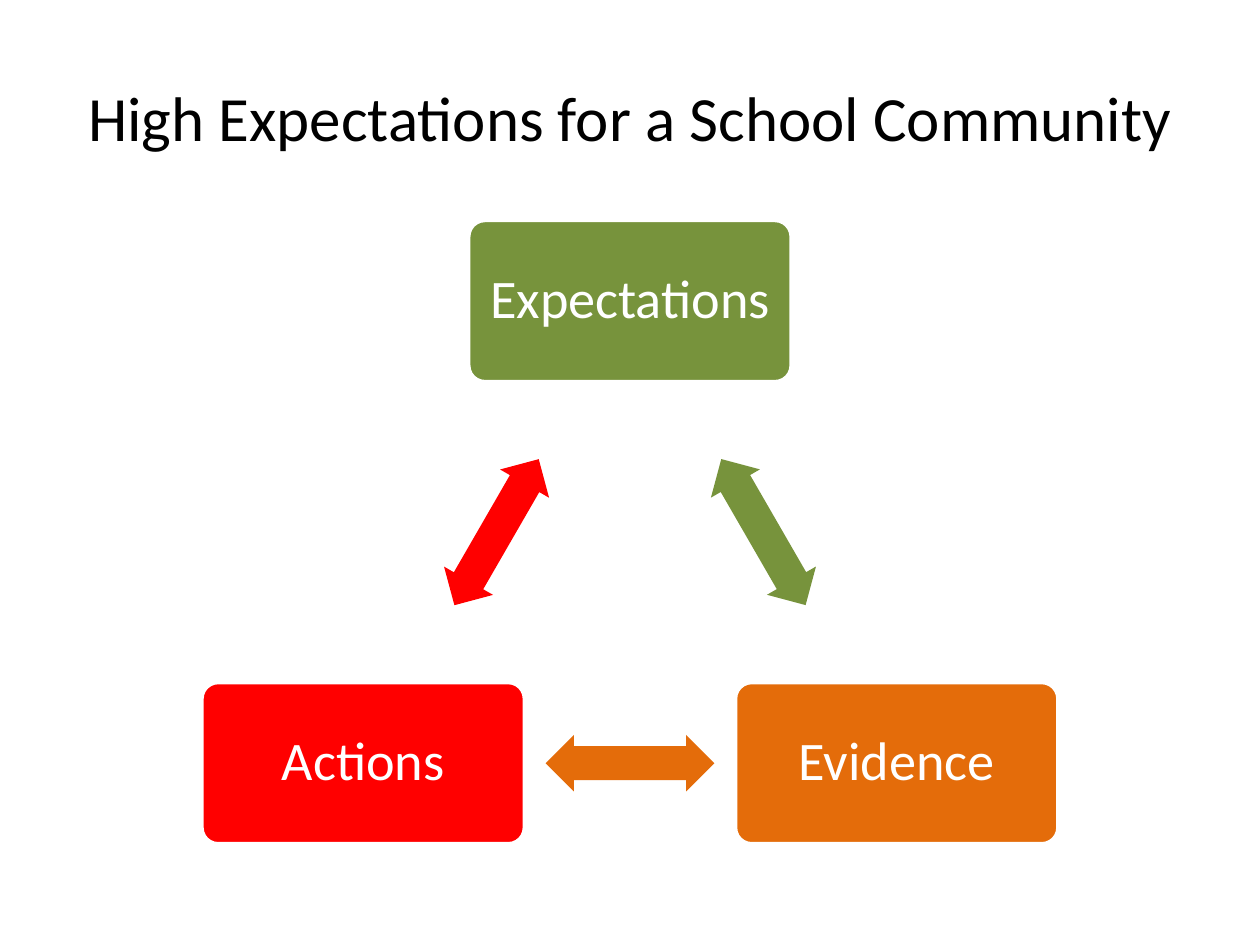
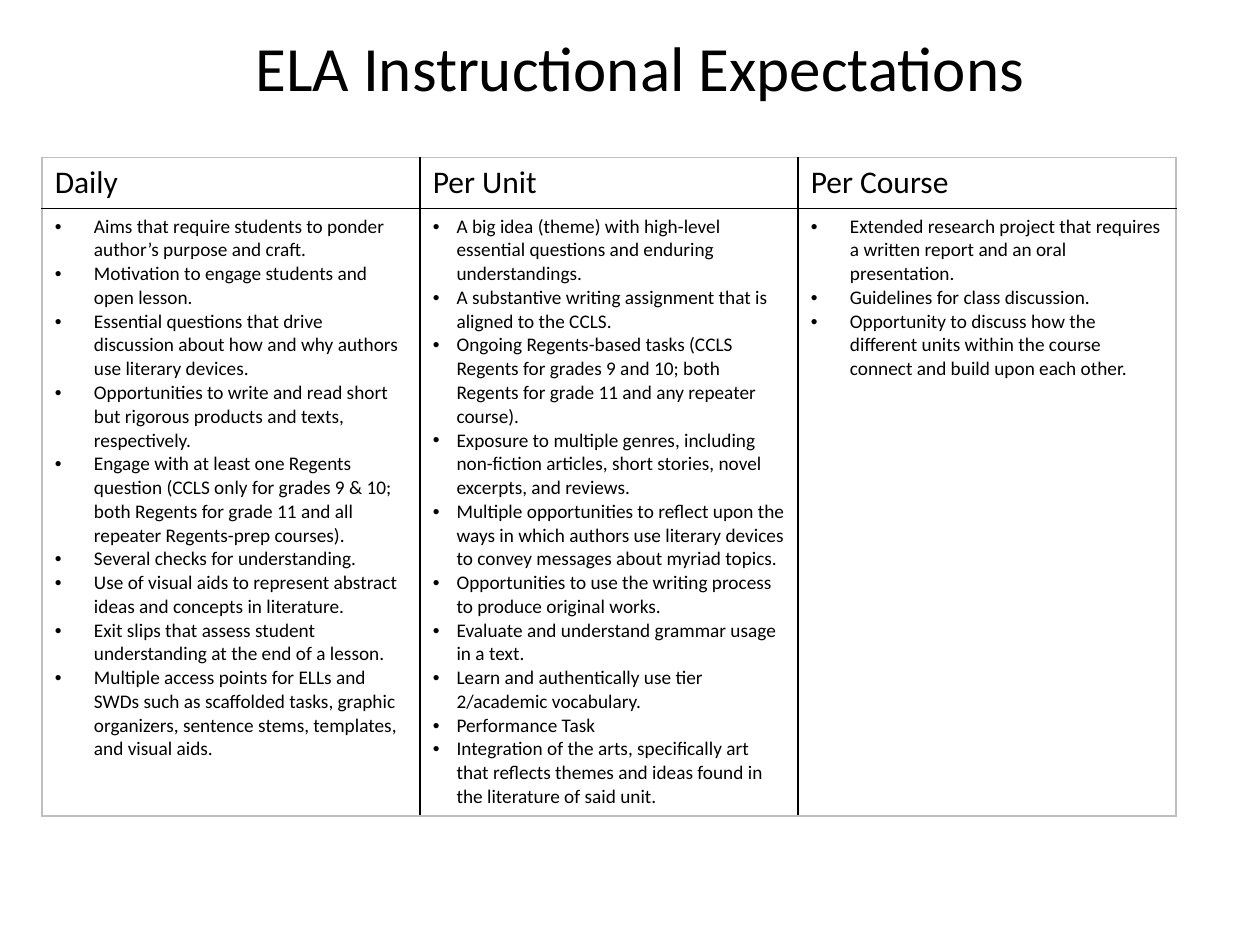
from dataclasses import dataclass
from math import cos, radians, sin

from lxml import etree
from pptx import Presentation
from pptx.dml.color import RGBColor
from pptx.enum.shapes import MSO_SHAPE
from pptx.enum.text import MSO_ANCHOR, PP_ALIGN
from pptx.oxml.ns import qn
from pptx.shapes.autoshape import Shape
from pptx.slide import Slide
from pptx.table import _Cell as Cell
from pptx.text.text import TextFrame
from pptx.util import Cm, Pt

ROUND = MSO_SHAPE.ROUNDED_RECTANGLE
ARROW = MSO_SHAPE.LEFT_RIGHT_ARROW
MIDDLE = MSO_ANCHOR.MIDDLE
CENTER = PP_ALIGN.CENTER
LEFT = PP_ALIGN.LEFT

FONT = "Calibri"
BLACK, WHITE, GRAY = "000000", "FFFFFF", "BFBFBF"
GREEN, ORANGE, RED = "77933C", "E46C0A", "FF0000"


@dataclass(frozen=True)
class Node:
    label: str
    color: str
    angle: int  # degrees, clockwise from the right
    turn: int  # rotation of the arrow to the next node


@dataclass(frozen=True)
class Column:
    head: str
    indent: float  # cm
    items: tuple[str, ...]


NODES = (
    Node("Expectations", GREEN, -90, 60),
    Node("Evidence", ORANGE, 30, 180),
    Node("Actions", RED, 150, 300),
)

COLUMNS = (
    Column("Daily", 0.79, (
        "Aims that require students to ponder author’s purpose and craft.",
        "Motivation to engage students and open lesson.",
        "Essential questions that drive discussion about how and why authors "
        "use literary devices.",
        "Opportunities to write and read short but rigorous products and "
        "texts, respectively.",
        "Engage with at least one Regents question (CCLS only for grades "
        "9 & 10; both Regents for grade 11 and all repeater Regents-prep "
        "courses).",
        "Several checks for understanding.",
        "Use of visual aids to represent abstract ideas and concepts in "
        "literature.",
        "Exit slips that assess student understanding at the end of a lesson.",
        "Multiple access points for ELLs and SWDs such as scaffolded tasks, "
        "graphic organizers, sentence stems, templates, and visual aids.",
    )),
    Column("Per Unit", 0.48, (
        "A big idea (theme) with high-level essential questions and enduring "
        "understandings.",
        "A substantive writing assignment that is aligned to the CCLS.",
        "Ongoing Regents-based tasks (CCLS Regents for grades 9 and 10; both "
        "Regents for grade 11 and any repeater course).",
        "Exposure to multiple genres, including non-fiction articles, short "
        "stories, novel excerpts, and reviews.",
        "Multiple opportunities to reflect upon the ways in which authors use "
        "literary devices to convey messages about myriad topics.",
        "Opportunities to use the writing process to produce original works.",
        "Evaluate and understand grammar usage in a text.",
        "Learn and authentically use tier 2/academic vocabulary.",
        "Performance Task",
        "Integration of the arts, specifically art that reflects themes and "
        "ideas found in the literature of said unit.",
    )),
    Column("Per Course", 0.79, (
        "Extended research project that requires a written report and an "
        "oral presentation.",
        "Guidelines for class discussion.",
        "Opportunity to discuss how the different units within the course "
        "connect and build upon each other.",
    )),
)


def rgb(code: str) -> RGBColor:
    return RGBColor.from_string(code)


def write(frame: TextFrame, text: str, size: float, color: str = BLACK,
          align: PP_ALIGN = LEFT) -> None:
    frame.word_wrap = True
    frame.text = text
    for para in frame.paragraphs:
        para.alignment = align
        for run in para.runs:
            run.font.name = FONT
            run.font.size = Pt(size)
            run.font.color.rgb = rgb(color)


def add_title(slide: Slide, text: str, left: float, top: float,
              height: float, foot: float = 0.13) -> None:
    box = slide.shapes.add_textbox(Cm(left), Cm(top), Cm(22.86), Cm(height))
    frame = box.text_frame
    write(frame, text, 36, align=CENTER)
    frame.vertical_anchor = MIDDLE
    frame.margin_bottom = Cm(foot)


def add_block(slide: Slide, kind: MSO_SHAPE, mid: tuple[float, float],
              size: tuple[float, float], color: str) -> Shape:
    """Draw a plain filled shape around its middle point."""
    (x, y), (wide, high) = mid, size
    shape = slide.shapes.add_shape(
        kind, Cm(x - wide / 2), Cm(y - high / 2), Cm(wide), Cm(high))
    shape.shadow.inherit = False
    shape.fill.solid()
    shape.fill.fore_color.rgb = rgb(color)
    shape.line.fill.background()
    return shape


def add_node(slide: Slide, node: Node) -> None:
    box = add_block(slide, ROUND, on_ring(node.angle, 6.21), (6.5, 3.25),
                    node.color)
    box.adjustments[0] = 0.1
    box.line.color.rgb = rgb(WHITE)
    box.line.width = Pt(2)
    frame = box.text_frame
    write(frame, node.label, 31, WHITE, CENTER)
    frame.paragraphs[0].line_spacing = 0.9
    frame.vertical_anchor = MIDDLE
    frame.margin_left = frame.margin_right = Cm(0.33)

    # The arrow sits halfway along the side to the next node
    arrow = add_block(slide, ARROW, on_ring(node.angle + 60, 6.21 / 2),
                      (3.4, 1.14), node.color)
    arrow.adjustments[0] = 0.6
    arrow.adjustments[1] = 0.5
    arrow.rotation = node.turn


def on_ring(angle: float, radius: float) -> tuple[float, float]:
    turn = radians(angle)
    return 12.7 + radius * cos(turn), 12.28 + radius * sin(turn)


def add_bullets(frame: TextFrame, indent: float) -> None:
    for para in frame.paragraphs:
        props = para._p.get_or_add_pPr()
        props.set("marL", str(Cm(indent)))
        props.set("indent", str(-Cm(indent)))
        etree.SubElement(props, qn("a:buFont"), typeface="Arial")
        etree.SubElement(props, qn("a:buChar"), char="•")


def style_cell(cell: Cell, edges: dict[str, str]) -> None:
    """Fill the cell white and draw its edges, given in L, R, T, B order."""
    cell.fill.solid()
    cell.fill.fore_color.rgb = rgb(WHITE)
    props = cell._tc.get_or_add_tcPr()
    for spot, (side, color) in enumerate(edges.items()):
        line = etree.Element(qn(f"a:ln{side}"), w=str(Pt(1)))
        fill = etree.SubElement(line, qn("a:solidFill"))
        etree.SubElement(fill, qn("a:srgbClr"), val=color)
        props.insert(spot, line)


def add_grid(slide: Slide, columns: tuple[Column, ...]) -> None:
    # The second row is tall enough for the longest list
    heights = (1.03, 12.25)
    last = len(columns) - 1
    table = slide.shapes.add_table(
        len(heights), len(columns), Cm(0.85), Cm(3.17),
        Cm(22.86), Cm(sum(heights))).table
    table.first_row = table.horz_banding = False
    for row, height in zip(table.rows, heights):
        row.height = Cm(height)
    for col, column in enumerate(columns):
        table.columns[col].width = Cm(7.62)
        head, body = table.cell(0, col), table.cell(1, col)
        write(head.text_frame, column.head, 18)
        write(body.text_frame, "\n".join(column.items), 11)
        add_bullets(body.text_frame, column.indent)
        # Gray outside, black between cells
        sides = {"L": BLACK if col else GRAY,
                 "R": BLACK if col < last else GRAY}
        style_cell(head, {**sides, "T": GRAY, "B": BLACK})
        style_cell(body, {**sides, "T": BLACK, "B": GRAY})


def main() -> None:
    deck = Presentation()
    deck.slide_width, deck.slide_height = Cm(25.4), Cm(19.05)
    blank = deck.slide_layouts[6]

    # Cycle of expectations, evidence and actions
    cycle = deck.slides.add_slide(blank)
    add_title(cycle, "High Expectations for a School Community",
              1.27, 0.76, 3.18)
    for node in NODES:
        add_node(cycle, node)

    # Table of expectations by time span
    plan = deck.slides.add_slide(blank)
    add_title(plan, "ELA Instructional Expectations", 1.47, 0.64, 1.9, 0.62)
    add_grid(plan, COLUMNS)

    deck.save("out.pptx")


if __name__ == "__main__":
    main()
